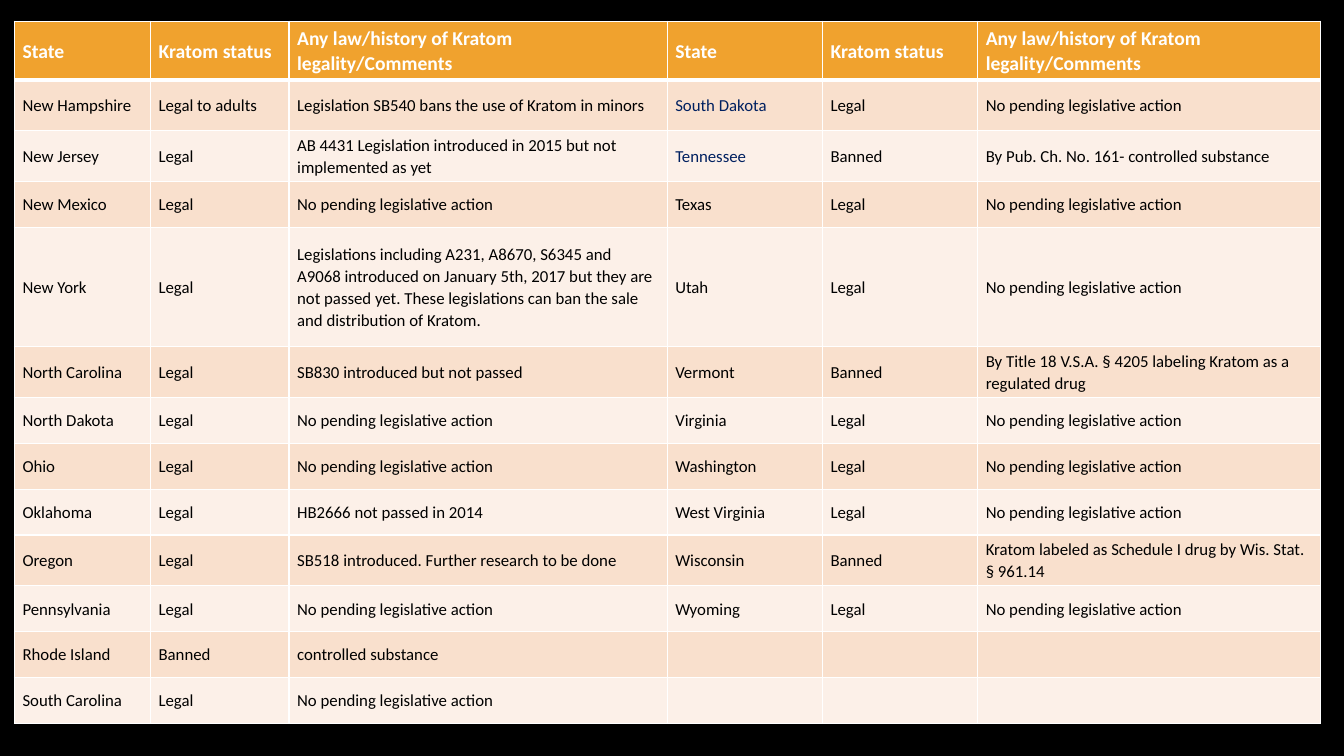
from lxml import etree
from pptx import Presentation
from pptx.dml import color
from pptx.enum import text
from pptx.oxml import ns
from pptx.util import Pt


def paint(fill, tone):
    fill.solid()
    fill.fore_color.rgb = color.RGBColor.from_string(tone)


def edge(cell, side, width):
    line = etree.SubElement(cell._tc.get_or_add_tcPr(), ns.qn("a:ln" + side), w=str(Pt(width)))
    fill = etree.SubElement(line, ns.qn("a:solidFill"))
    etree.SubElement(fill, ns.qn("a:srgbClr"), val="FFFFFF")


none = "No pending legislative action"
head = ("State", "Kratom status", "Any law/history of Kratom legality/Comments")
left = [
    head,
    ("New Hampshire", "Legal to adults", "Legislation SB540 bans the use of Kratom in minors"),
    ("New Jersey", "Legal", "AB 4431 Legislation introduced in 2015 but not implemented as yet"),
    ("New Mexico", "Legal", none),
    ("New York", "Legal", "Legislations including A231, A8670, S6345 and A9068 introduced on "
     "January 5th, 2017 but they are not passed yet. These legislations can ban the sale "
     "and distribution of Kratom."),
    ("North Carolina", "Legal", "SB830 introduced but not passed"),
    ("North Dakota", "Legal", none),
    ("Ohio", "Legal", none),
    ("Oklahoma", "Legal", "HB2666 not passed in 2014"),
    ("Oregon", "Legal", "SB518 introduced. Further research to be done"),
    ("Pennsylvania", "Legal", none),
    ("Rhode Island", "Banned", "controlled substance"),
    ("South Carolina", "Legal", none),
]
right = [
    head,
    ("South Dakota", "Legal", none),
    ("Tennessee", "Banned", "By Pub. Ch. No. 161- controlled substance"),
    ("Texas", "Legal", none),
    ("Utah", "Legal", none),
    ("Vermont", "Banned", "By Title 18 V.S.A. § 4205 labeling Kratom as a regulated drug"),
    ("Virginia", "Legal", none),
    ("Washington", "Legal", none),
    ("West Virginia", "Legal", none),
    ("Wisconsin", "Banned", "Kratom labeled as Schedule I drug by Wis. Stat. § 961.14"),
    ("Wyoming", "Legal", none),
    ("", "", ""),
    ("", "", ""),
]
rows = [a + b for a, b in zip(left, right)]
wide = [97.2, 99, 270.1, 110.9, 110.9, 244.8]
tall = [41.9, 36, 36.5, 32.7, 85.4, 36.4, 32.7, 32.7, 32.7, 36.4, 32.7, 32.7, 32.7]
box = {"margin_left": Pt(5.8), "margin_right": Pt(5.8), "margin_top": Pt(1.4),
       "margin_bottom": Pt(1.4), "vertical_anchor": text.MSO_ANCHOR.MIDDLE}
para = {"line_spacing": 1.07, "space_after": Pt(15.8)}
navy = ("South Dakota", "Tennessee")

deck = Presentation()
deck.slide_width, deck.slide_height = Pt(960), Pt(540)
slide = deck.slides.add_slide(deck.slide_layouts[6])
paint(slide.background.fill, "000000")

frame = slide.shapes.add_table(len(rows), len(wide), Pt(10.3), Pt(15.2), Pt(sum(wide)), Pt(sum(tall)))
table = frame.table
table.horz_banding = False
for col, width in zip(table.columns, wide):
    col.width = Pt(width)

for r, row in enumerate(rows):
    table.rows[r].height = Pt(tall[r])
    top = r == 0
    back = "F0A22E" if top else ("FCF0E8", "F9E0CD")[r % 2]
    font = {"name": "Calibri", "size": Pt(14 if top else 12), "bold": top}
    for c, words in enumerate(row):
        cell = table.cell(r, c)
        for key, value in box.items():
            setattr(cell, key, value)
        for side, width in zip("LRTB", (1, 1, 3 if r == 1 else 1, 3 if top else 1)):
            edge(cell, side, width)
        paint(cell.fill, back)
        if words:
            line = cell.text_frame.paragraphs[0]
            for key, value in para.items():
                setattr(line, key, value)
            run = line.add_run()
            run.text = words
            for key, value in font.items():
                setattr(run.font, key, value)
            paint(run.font.fill, "FFFFFF" if top else "002060" if words in navy else "000000")

deck.save("out.pptx")
